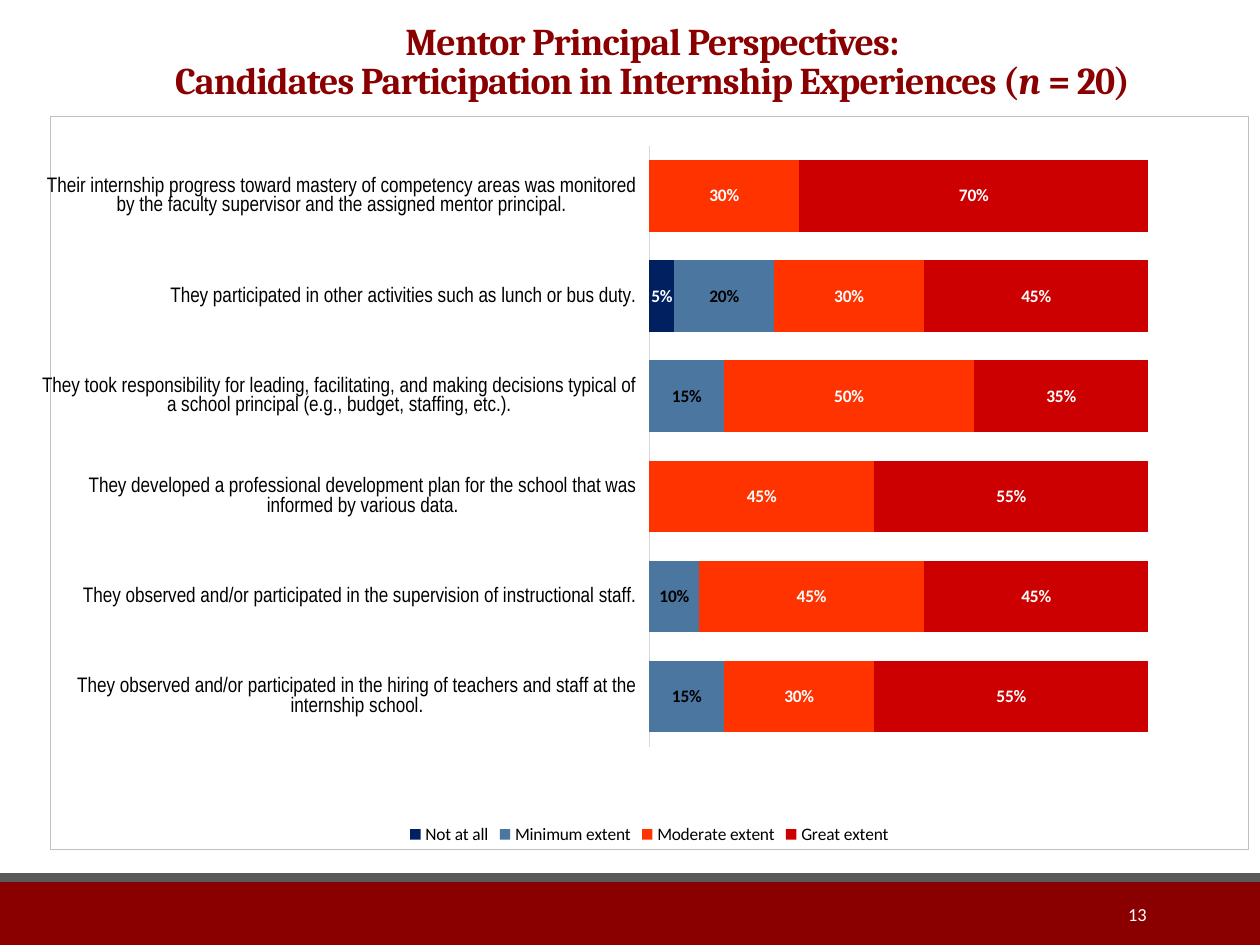
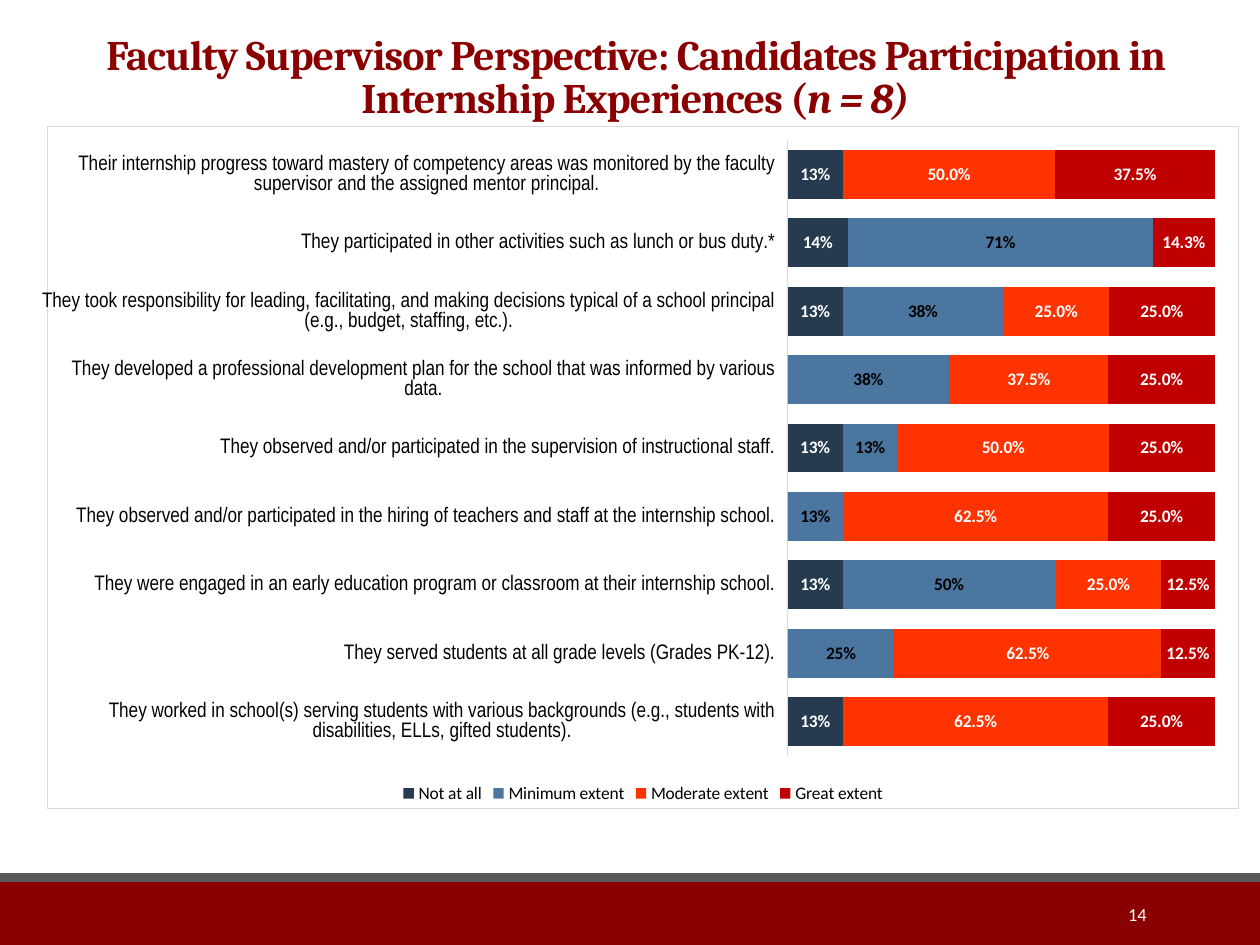
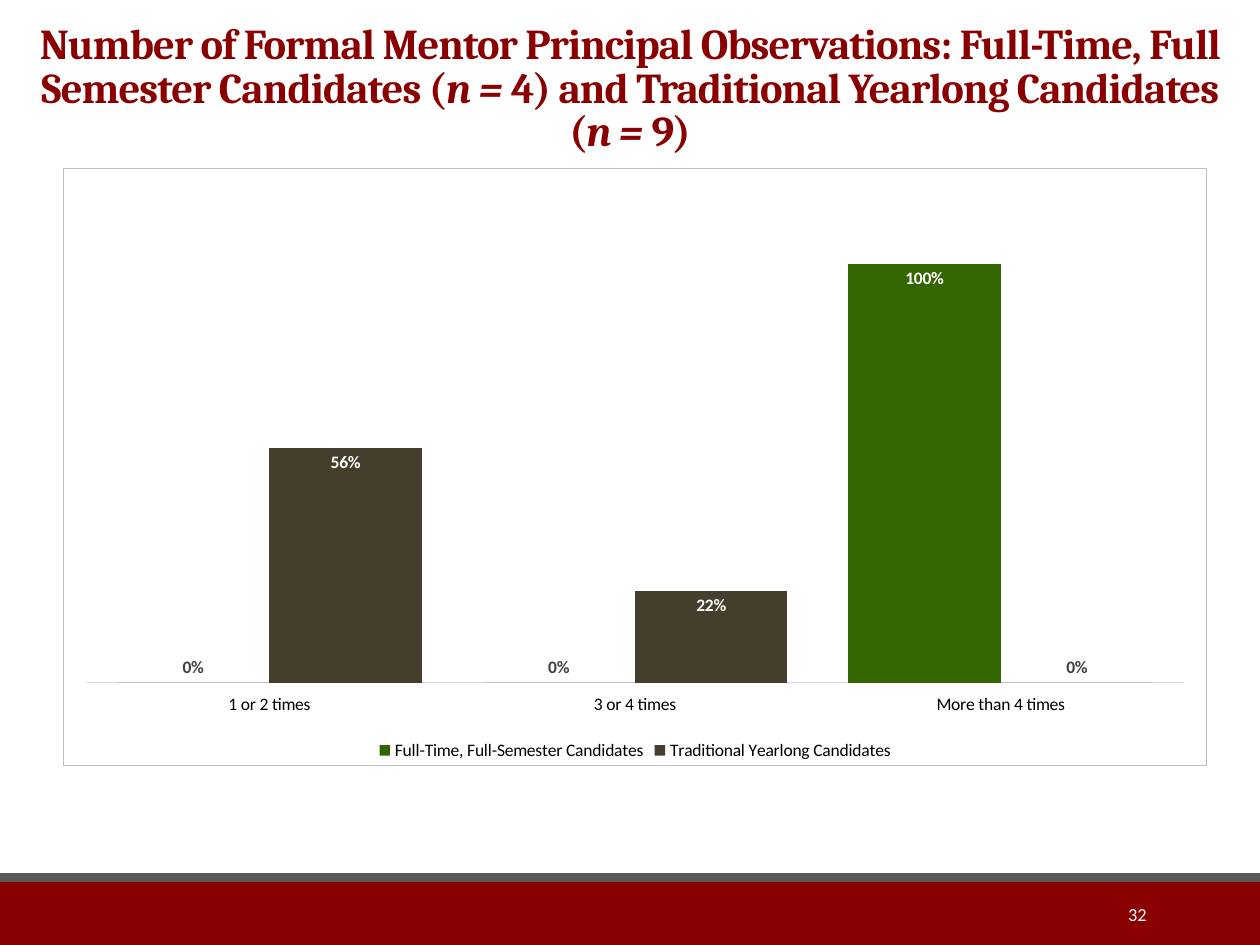
from lxml import etree
from pptx import Presentation
from pptx.chart.data import CategoryChartData
from pptx.dml.color import RGBColor
from pptx.enum.chart import XL_CHART_TYPE as ChartType
from pptx.enum.chart import XL_LABEL_POSITION as LabelPosition
from pptx.enum.chart import XL_LEGEND_POSITION as LegendPosition
from pptx.enum.chart import XL_TICK_LABEL_POSITION as TickLabels
from pptx.enum.chart import XL_TICK_MARK as TickMark
from pptx.enum.shapes import MSO_SHAPE as Shape
from pptx.enum.text import MSO_ANCHOR as Anchor
from pptx.enum.text import PP_ALIGN as Align
from pptx.oxml import parse_xml
from pptx.oxml.ns import nsdecls, qn
from pptx.util import Pt

PX = 914400 / 126  # EMU in one px
COLORS = {
    "maroon": "8A0000", "band": "595959", "white": "FFFFFF", "black": "000000",
    "axis": "D9D9D9", "frame": "BFBFBF", "label": "404040",
    "navy": "002060", "slate": "263B50", "blue": "4B76A0", "orange": "FF3300",
    "red": "CC0000", "dark_red": "C00000", "green": "336600", "brown": "463E2C",
}


def px(*lengths):
    return [round(length * PX) for length in lengths]


def style_font(font, name, size, color, bold=False):
    font.name, font.size, font.bold = name, Pt(size), bold
    font.color.rgb = RGBColor.from_string(COLORS[color])


# Statements, from the bottom of the chart to the top
statements = [
    "They observed and/or participated in the hiring of teachers and staff at the internship school.",
    "They observed and/or participated in the supervision of instructional staff.",
    "They developed a professional development plan for the school that was informed by various data.",
    "They took responsibility for leading, facilitating, and making decisions typical of "
    "a school principal (e.g., budget, staffing, etc.).",
    "They participated in other activities such as lunch or bus duty.",
    "Their internship progress toward mastery of competency areas was monitored "
    "by the faculty supervisor and the assigned mentor principal.",
]
supervisor_statements = [
    "They worked in school(s) serving students with various backgrounds "
    "(e.g., students with disabilities, ELLs, gifted students).",
    "They served students at all grade levels (Grades PK-12).",
    "They were engaged in an early education program or classroom at their internship school.",
    *statements[:4], statements[4] + "*", statements[5],
]

# Title runs are (text, italic); series are (name, values, fill, label color, format)
pages = [
    {
        "number": 13, "title_box": (49, 21, 1207, 87), "title_size": 21.6, "anchor": Anchor.BOTTOM,
        "title": [("Mentor Principal Perspectives:", False), ("\n", False),
                  ("Candidates Participation in Internship Experiences (", False),
                  ("n", True), (" = 20)", False)],
        "chart_box": (42, 116, 1207, 734), "type": ChartType.BAR_STACKED, "maximum": 1.2,
        "frame": "frame", "axis_font": ("Arial Narrow", 12), "categories": statements,
        "plot_area": (0.5, 0.04, 0.5, 0.82),
        "series": [
            ("Not at all", (0, 0, 0, 0, 0.05, 0), "navy", "white", "0%"),
            ("Minimum extent", (0.15, 0.1, 0, 0.15, 0.2, 0), "blue", "black", "0%"),
            ("Moderate extent", (0.3, 0.45, 0.45, 0.5, 0.3, 0.3), "orange", "white", "0%"),
            ("Great extent", (0.55, 0.45, 0.55, 0.35, 0.45, 0.7), "red", "white", "0%"),
        ],
    },
    {
        "number": 14, "title_box": (21, 21, 1229, 107), "title_size": 24, "anchor": Anchor.BOTTOM,
        "title": [("Faculty Supervisor Perspective: Candidates Participation in "
                   "Internship Experiences (", False), ("n = 8)", True)],
        "chart_box": (42, 126, 1197, 683), "type": ChartType.BAR_STACKED_100, "maximum": 1,
        "frame": "axis", "axis_font": ("Arial Narrow", 12), "categories": supervisor_statements,
        "series": [
            ("Not at all", (0.13, 0, 0.13, 0, 0.13, 0, 0.13, 0.14, 0.13),
             "slate", "white", "0%"),
            ("Minimum extent", (0, 0.25, 0.5, 0.13, 0.13, 0.38, 0.38, 0.71, 0),
             "blue", "black", "0%"),
            ("Moderate extent", (0.625, 0.625, 0.25, 0.625, 0.5, 0.375, 0.25, 0, 0.5),
             "orange", "white", "0.0%"),
            ("Great extent", (0.25, 0.125, 0.125, 0.25, 0.25, 0.25, 0.25, 0.143, 0.375),
             "dark_red", "white", "0.0%"),
        ],
    },
    {
        "number": 32, "title_box": (21, 19, 1218, 192), "title_size": 24.3, "anchor": Anchor.TOP,
        "title": [("Number of Formal Mentor Principal Observations: Full-Time, Full "
                   "Semester Candidates (", False), ("n = ", True),
                  ("4) and Traditional Yearlong Candidates (", False),
                  ("n = ", True), ("9)", False)],
        "chart_box": (63, 168, 1144, 598), "type": ChartType.COLUMN_CLUSTERED, "maximum": 1.2,
        "frame": "frame", "axis_font": ("Calibri", 10),
        "categories": ["1 or 2 times", "3 or 4 times", "More than 4 times"],
        "series": [
            ("Full-Time, Full-Semester Candidates", (0, 0, 1), "green", "label", "0%"),
            ("Traditional Yearlong Candidates", (0.56, 0.22, 0), "brown", "label", "0%"),
        ],
    },
]

deck = Presentation()
deck.slide_width, deck.slide_height = px(1260, 945)

for page in pages:
    slide = deck.slides.add_slide(deck.slide_layouts[6])
    stacked = page["type"] != ChartType.COLUMN_CLUSTERED

    # Footer bands
    for top, height, color in ((882, 63, "maroon"), (873, 9, "band")):
        band = slide.shapes.add_shape(Shape.RECTANGLE, *px(0, top, 1260, height))
        band.shadow.inherit = False
        band.fill.solid()
        band.fill.fore_color.rgb = RGBColor.from_string(COLORS[color])
        band.line.fill.background()

    # Title
    title = slide.shapes.add_textbox(*px(*page["title_box"])).text_frame
    title.word_wrap = True
    title.vertical_anchor = page["anchor"]
    para = title.paragraphs[0]
    para.alignment, para.line_spacing = Align.CENTER, 0.85
    style_font(para.font, "Cambria", page["title_size"], "maroon", True)
    para._p.pPr.find(qn("a:defRPr")).set("spc", "-50")
    for text, italic in page["title"]:
        if text == "\n":
            para.add_line_break()
            continue
        span = para.add_run()
        span.text = text
        if italic:
            span.font.italic = True

    # Chart data
    data = CategoryChartData(number_format="0%")
    data.categories = page["categories"]
    for name, values, _, _, number_format in page["series"]:
        data.add_series(name, values, number_format)
    chart = slide.shapes.add_chart(page["type"], *px(*page["chart_box"]), data).chart
    chart.has_title = False
    style_font(chart.font, "Calibri", 10, "black")

    # Chart frame
    chart._chartSpace.find(qn("c:chart")).addnext(parse_xml(
        f'<c:spPr {nsdecls("c", "a")}>'
        f'<a:solidFill><a:srgbClr val="{COLORS["white"]}"/></a:solidFill>'
        f'<a:ln w="9525"><a:solidFill><a:srgbClr val="{COLORS[page["frame"]]}"/>'
        '</a:solidFill></a:ln></c:spPr>'))

    # Legend and axes
    chart.has_legend = True
    chart.legend.position = LegendPosition.BOTTOM
    chart.legend.include_in_layout = False
    style_font(chart.legend.font, "Calibri", 10, "black")
    category_axis, value_axis = chart.category_axis, chart.value_axis
    category_axis.has_major_gridlines = False
    category_axis.major_tick_mark = category_axis.minor_tick_mark = TickMark.NONE
    category_axis.tick_label_position = TickLabels.LOW
    category_axis.format.line.color.rgb = RGBColor.from_string(COLORS["axis"])
    category_axis.format.line.width = Pt(0.75)
    style_font(category_axis.tick_labels.font, *page["axis_font"], "black")
    value_axis.visible = value_axis.has_major_gridlines = False
    value_axis.minimum_scale, value_axis.maximum_scale = 0, page["maximum"]
    value_axis.tick_labels.number_format = "0%"
    value_axis.tick_labels.number_format_is_linked = False

    # Fixed plot area, where the page asks for one
    if "plot_area" in page:
        plot_area = chart._chartSpace.find(".//" + qn("c:plotArea"))
        for old_layout in plot_area.findall(qn("c:layout")):
            plot_area.remove(old_layout)
        layout = etree.Element(qn("c:layout"))
        manual = etree.SubElement(layout, qn("c:manualLayout"))
        settings = [("layoutTarget", "inner"), ("xMode", "edge"), ("yMode", "edge"),
                    *zip("xywh", page["plot_area"])]
        for tag, value in settings:
            etree.SubElement(manual, qn(f"c:{tag}")).set("val", str(value))
        plot_area.insert(0, layout)

    # Bars and their labels
    plot = chart.plots[0]
    plot.gap_width, plot.overlap = 40, 100 if stacked else 0
    plot.vary_by_categories = False
    for series, (_, values, fill, label_color, number_format) in zip(plot.series, page["series"]):
        series.format.fill.solid()
        series.format.fill.fore_color.rgb = RGBColor.from_string(COLORS[fill])
        series.invert_if_negative = False
        labels = series.data_labels
        labels.show_value = True
        labels.number_format, labels.number_format_is_linked = number_format, False
        labels.position = LabelPosition.CENTER if stacked else LabelPosition.OUTSIDE_END
        style_font(labels.font, "Calibri", 10, label_color, True)
        hidden = 0
        for index, value in enumerate(values):
            if stacked and value == 0:
                labels._element.insert(hidden, parse_xml(
                    f'<c:dLbl {nsdecls("c")}><c:idx val="{index}"/><c:delete val="1"/></c:dLbl>'))
                hidden += 1
            elif not stacked and value > 0:
                point_label = series.points[index].data_label
                style_font(point_label.font, "Calibri", 10, "white", True)
                point_label.position = LabelPosition.INSIDE_END

    # Page number
    number = slide.shapes.add_textbox(*px(1023, 889, 136, 50)).text_frame
    number.word_wrap = True
    number.vertical_anchor = Anchor.MIDDLE
    para = number.paragraphs[0]
    para.text = str(page["number"])
    para.alignment = Align.RIGHT
    style_font(para.font, "Calibri", 10.5, "white")

deck.save("out.pptx")
